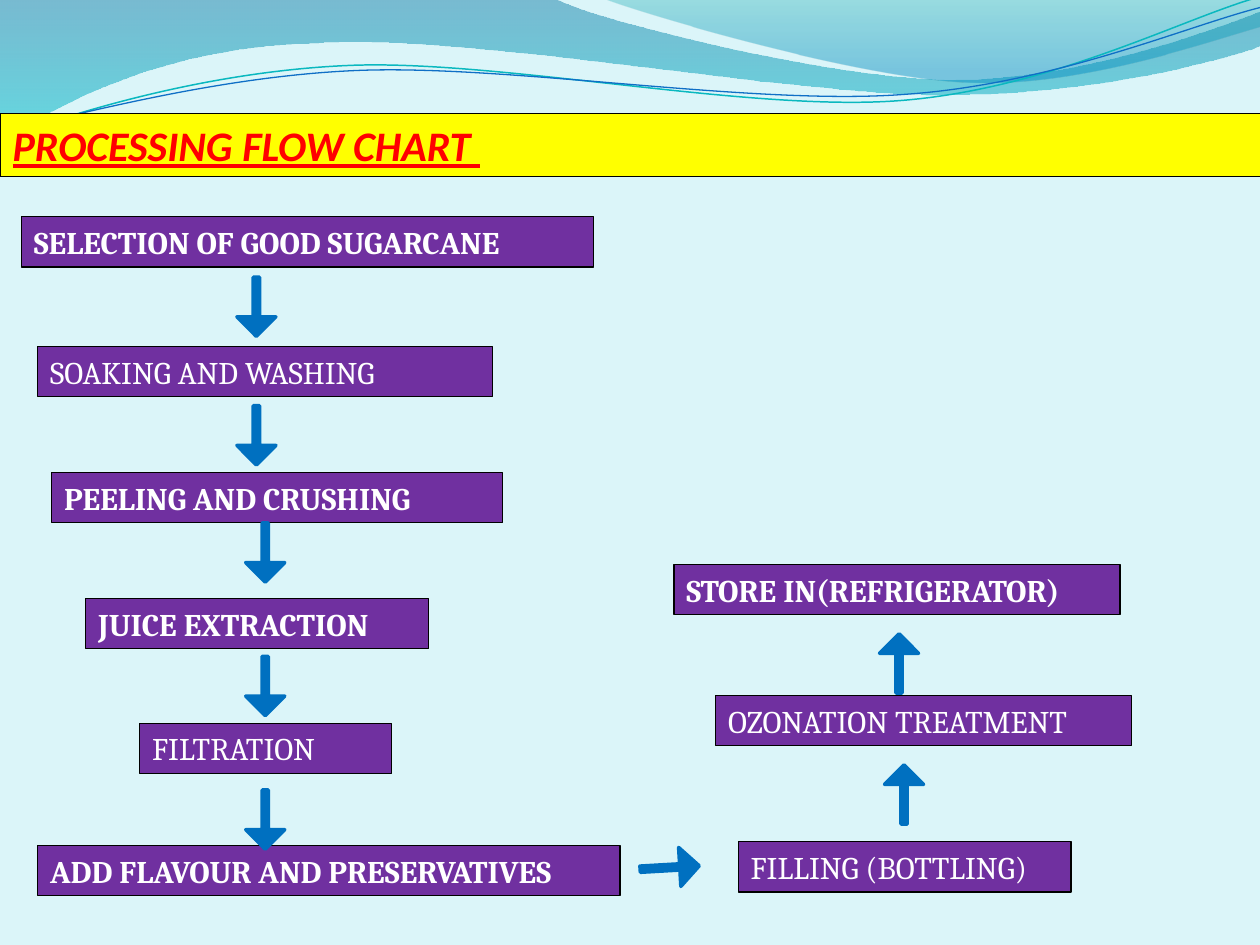
from lxml import etree
from pptx import Presentation
from pptx.dml.color import RGBColor
from pptx.enum.shapes import MSO_SHAPE as Shape
from pptx.enum.text import MSO_ANCHOR as Anchor, MSO_AUTO_SIZE as AutoSize, PP_ALIGN as Align
from pptx.oxml.ns import qn
from pptx.util import Inches, Pt

color = RGBColor.from_string


def style_box(box, text, fill, size, font, ink, bold):
    """Fill and outline a box and set its single line of text."""
    box.fill.solid()
    box.fill.fore_color.rgb = color(fill)
    box.line.color.rgb = color("000000")
    box.line.width = Pt(0.75)
    frame = box.text_frame
    frame.word_wrap = True
    frame.auto_size = AutoSize.NONE
    frame.vertical_anchor = Anchor.TOP
    frame.text = text
    para = frame.paragraphs[0]
    para.alignment = Align.LEFT
    para.font.size = Pt(size)
    para.font.name = font
    para.font.color.rgb = color(ink)
    para.font.bold = bold
    return para


def draw_wave(page, path, closed):
    """Draw a path: a pair is a straight step, six numbers are a Bezier curve."""
    start, *steps = path
    points = [step[i:i + 2] for step in steps for i in range(0, len(step), 2)]
    thousandths = [(round(x * 1000), round(y * 1000)) for x, y in [start] + points]
    builder = page.shapes.build_freeform(*thousandths[0], scale=Inches(1) / 1000)
    builder.add_line_segments(thousandths[1:], close=closed)
    wave = builder.convert_to_shape()
    wave.shadow.inherit = False
    # Join each curve's three straight segments into one Bezier segment
    segments = iter(list(wave._element.iter(qn("a:lnTo"))))
    for step in steps:
        parts = [next(segments) for _ in range(len(step) // 2)]
        if len(parts) == 3:
            curve = etree.Element(qn("a:cubicBezTo"))
            parts[0].addprevious(curve)
            for part in parts:
                curve.append(part[0])
                part.getparent().remove(part)
    return wave


deck = Presentation()
deck.slide_width, deck.slide_height = Inches(10), Inches(7.5)
page = deck.slides.add_slide(deck.slide_layouts[5])
page.background.fill.solid()
page.background.fill.fore_color.rgb = color("DBF5F9")

# Translucent gradient waves: path, then (colour, opacity %, position)
bands = [
    ([(0, 0), (4.4, -0.01), (4.76, 0.17, 6.64, 0.63, 7.58, 0.63),
      (8.53, 0.63, 9.58, 0.26, 10, 0.09), (10.01, 0.36),
      (9.83, 0.44, 8.7, 0.76, 7.46, 0.75), (6.22, 0.75, 3.82, 0.28, 2.57, 0.34),
      (1.29, 0.36, 0.46, 0.83, -0.01, 1.13)],
     [("0074A1", 45, 0), ("00C6CF", 55, 1)]),
    ([(4.79, -0.01), (5.09, 0.11, 6.82, 0.62, 7.69, 0.65),
      (8.56, 0.69, 9.61, 0.32, 10, 0.21), (10, 0)],
     [("00A1A9", 30, 0), ("008BBF", 45, 0.8)]),
]
for path, stops in bands:
    wave = draw_wave(page, path, True)
    wave.line.fill.background()
    wave.fill.gradient()
    wave.fill.gradient_angle = 270
    for stop, (tint, opacity, position) in zip(wave.fill.gradient_stops, stops):
        stop.color.rgb = color(tint)
        stop.position = position
    for tint, (_, opacity, _) in zip(wave._element.spPr.iter(qn("a:srgbClr")), stops):
        etree.SubElement(tint, qn("a:alpha")).set("val", str(opacity * 1000))

# Thin wave lines
threads = [
    ([(0, 1.11), (0.48, 0.93, 1.58, 0.57, 2.77, 0.52),
      (3.95, 0.47, 5.93, 0.89, 7.13, 0.8), (8.33, 0.71, 9.38, 0.15, 9.98, -0.02)],
     "0AB8BF", 0.85),
    ([(0, 1.04), (0.47, 0.96, 1.64, 0.61, 2.83, 0.56),
      (4.03, 0.51, 5.97, 0.84, 7.17, 0.75), (8.36, 0.67, 9.41, 0.21, 10, 0.06)],
     "0F6FC6", 0.75),
]
for path, ink, width in threads:
    wave = draw_wave(page, path, False)
    wave.fill.background()
    wave.line.color.rgb = color(ink)
    wave.line.width = Pt(width)

# Title bar, brought in front of the waves
title = page.shapes.title
page.shapes._spTree.append(title._element)
title.left, title.top = Inches(0), Inches(0.9)
title.width, title.height = Inches(10.91), Inches(0.5)
para = style_box(title, "PROCESSING FLOW CHART ", "FFFF00", 24, "Calibri", "FF0000", True)
para.font.italic = True
para.font.underline = True

# Process steps: text, left, top, width, bold
steps = [
    ("SELECTION OF GOOD SUGARCANE", 0.17, 1.72, 4.54, True),
    ("SOAKING AND WASHING", 0.3, 2.75, 3.61, False),
    ("PEELING AND CRUSHING", 0.41, 3.75, 3.58, True),
    ("JUICE EXTRACTION", 0.68, 4.75, 2.72, True),
    ("FILTRATION", 1.11, 5.74, 2, False),
    ("ADD FLAVOUR AND PRESERVATIVES", 0.3, 6.71, 4.62, True),
    ("FILLING (BOTTLING)", 5.86, 6.68, 2.64, False),
    ("OZONATION TREATMENT", 5.68, 5.52, 3.3, False),
    ("STORE IN(REFRIGERATOR)", 5.35, 4.48, 3.54, True),
]
for text, left, top, width, bold in steps:
    box = page.shapes.add_shape(Shape.RECTANGLE, Inches(left), Inches(top),
                                Inches(width), Inches(0.4))
    box.shadow.inherit = False
    style_box(box, text, "7030A0", 18, "Cambria", "FFFFFF", bold)

# Block arrows between steps: left, top, rotation
arrows = [
    (1.88, 2.2, 0), (1.88, 3.22, 0), (1.95, 4.15, 0), (1.95, 5.21, 0), (1.95, 6.27, 0),
    (5.16, 6.65, 266.7), (7.02, 6.07, 180), (6.98, 5.03, 180),
]
for left, top, rotation in arrows:
    arrow = page.shapes.add_shape(Shape.DOWN_ARROW, Inches(left), Inches(top),
                                  Inches(0.31), Inches(0.47))
    arrow.shadow.inherit = False
    arrow.rotation = rotation
    arrow.adjustments[0] = 0.16
    arrow.adjustments[1] = 0.5
    arrow.fill.solid()
    arrow.fill.fore_color.rgb = color("0070C0")
    arrow.line.color.rgb = color("0070C0")
    arrow.line.width = Pt(2)
    etree.SubElement(arrow.line._get_or_add_ln(), qn("a:round"))

deck.save("out.pptx")
